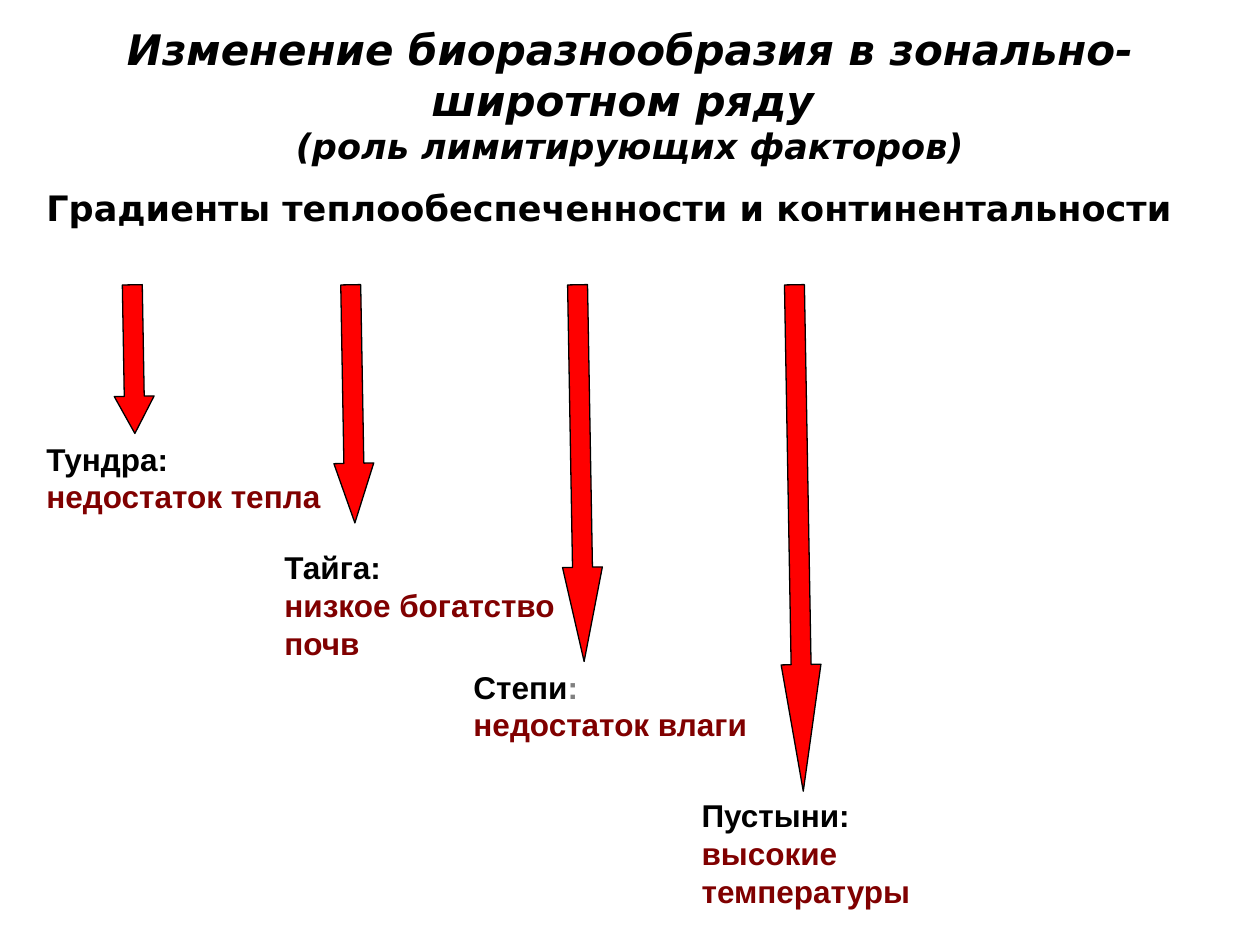
"""Build the slide on biodiversity change along the zonal-latitudinal series."""
from pptx import Presentation
from pptx.dml.color import RGBColor
from pptx.enum import shapes, text
from pptx.util import Inches, Pt

COLORS = {"black": "000000", "maroon": "800000", "gray": "808080", "red": "FF0000"}
ARROW_TOP = 2.26
ARROW_THICKNESS = 0.316


def format_font(font, name, size, color="black", italic=False):
    font.name = name
    font.size = Pt(size)
    font.bold = True
    font.italic = italic
    font.color.rgb = RGBColor.from_string(COLORS[color])


def add_text_frame(slide, left, top, width, height):
    frame = slide.shapes.add_textbox(Inches(left), Inches(top), Inches(width), Inches(height)).text_frame
    frame.word_wrap = True
    return frame


presentation = Presentation()
presentation.slide_width = Inches(10)
presentation.slide_height = Inches(7.5)
slide = presentation.slides.add_slide(presentation.slide_layouts[5])

title = slide.shapes.title
title.left, title.top, title.width, title.height = Inches(0), Inches(0.14), Inches(10), Inches(1.25)
title_frame = title.text_frame
title_frame.auto_size = text.MSO_AUTO_SIZE.NONE
title_frame.vertical_anchor = text.MSO_ANCHOR.TOP
title_frame.text = "Изменение биоразнообразия в зонально-широтном ряду \n(роль лимитирующих факторов)"
for paragraph, size in zip(title_frame.paragraphs, (24, 20)):
    paragraph.alignment = text.PP_ALIGN.CENTER
    format_font(paragraph.font, "DejaVu Sans", size, italic=True)

subtitle = add_text_frame(slide, 0.27, 1.43, 9.57, 0.77).paragraphs[0]
subtitle.text = "Градиенты теплообеспеченности и континентальности"
format_font(subtitle.font, "DejaVu Sans", 20)

arrows = [(1.06, 1.18), (2.8, 1.89), (4.61, 2.99), (6.34, 4.02)]
for center, length in arrows:
    arrow = slide.shapes.add_shape(
        shapes.MSO_SHAPE.RIGHT_ARROW,
        Inches(center - length / 2), Inches(ARROW_TOP + (length - ARROW_THICKNESS) / 2),
        Inches(length), Inches(ARROW_THICKNESS))
    arrow.rotation = 89
    arrow.adjustments[0] = 0.5
    arrow.adjustments[1] = length / 4 / ARROW_THICKNESS
    arrow.shadow.inherit = False
    arrow.fill.solid()
    arrow.fill.fore_color.rgb = RGBColor.from_string(COLORS["red"])
    arrow.line.color.rgb = RGBColor.from_string(COLORS["black"])
    arrow.line.width = Pt(0.75)

zones = [
    ((0.27, 3.44, 2.44, 0.7), [[("Тундра:", "black"), (" недостаток тепла", "maroon")]]),
    ((2.16, 4.3, 2.44, 1), [[("Тайга:", "black")], [("низкое богатство почв", "maroon")]]),
    ((3.66, 5.25, 2.44, 0.7), [[("Степи", "black"), (":", "gray")], [("недостаток влаги", "maroon")]]),
    ((5.47, 6.27, 1.89, 1.01), [[("Пустыни:", "black")], [("высокие температуры", "maroon")]]),
]
for box, lines in zones:
    frame = add_text_frame(slide, *box)
    for index, line in enumerate(lines):
        paragraph = frame.add_paragraph() if index else frame.paragraphs[0]
        for wording, color in line:
            run = paragraph.add_run()
            run.text = wording
            format_font(run.font, "Arial", 18, color)

presentation.save("out.pptx")
